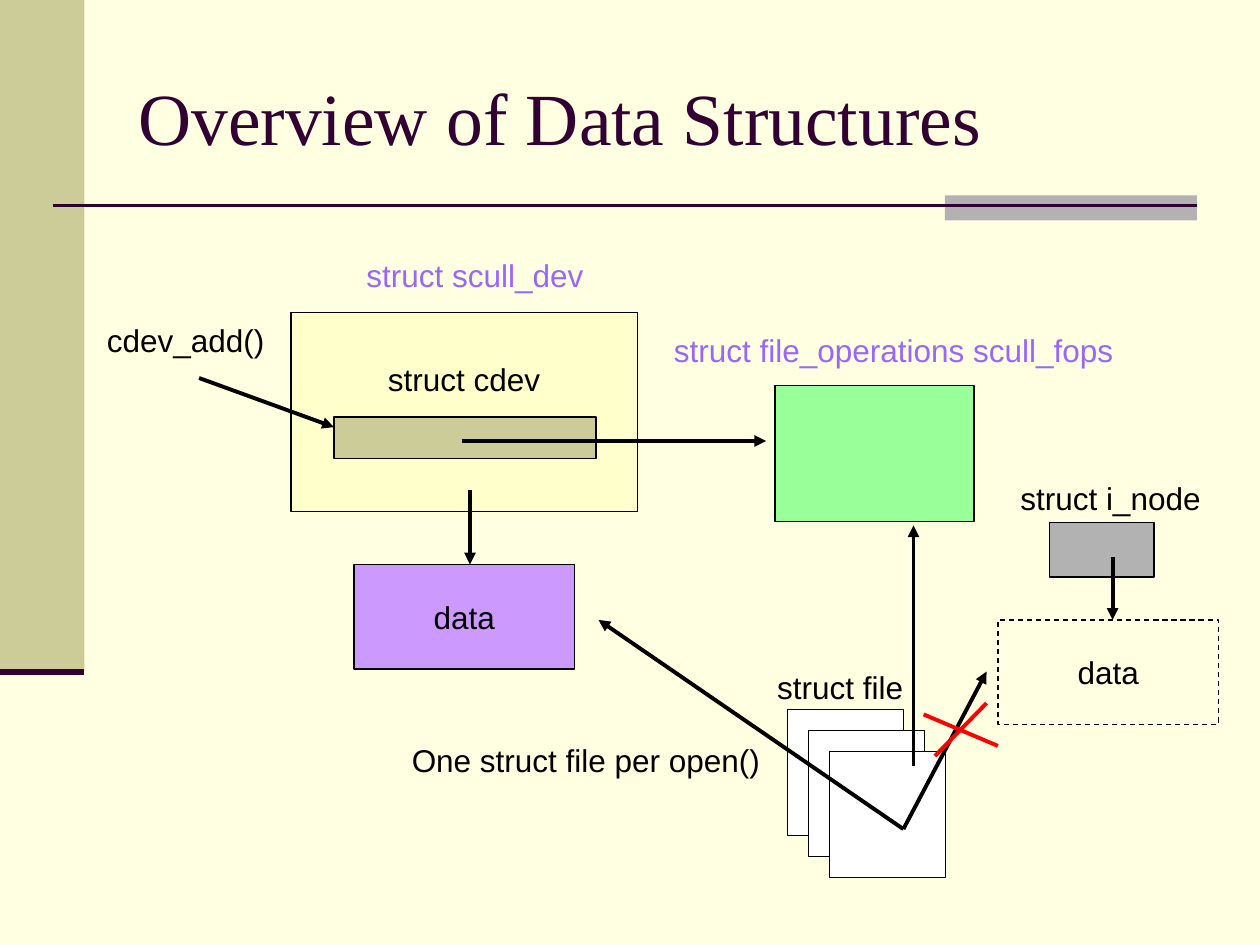
from lxml.etree import SubElement
from pptx import Presentation
from pptx.dml.color import RGBColor
from pptx.enum.dml import MSO_LINE
from pptx.enum.shapes import MSO_CONNECTOR, MSO_SHAPE
from pptx.enum.text import MSO_ANCHOR, MSO_AUTO_SIZE, PP_ALIGN
from pptx.oxml.ns import qn
from pptx.util import Inches, Pt

INK = "000000"
PLUM = "330033"
VIOLET = "9966FF"
SAND = "CCCC99"
GRAY = "B2B2B2"


def color(code):
    """Turn a hex string into a colour."""
    return RGBColor.from_string(code)


def write(shape, text, size=18, font="Arial", ink=INK):
    """Put one styled line of text in a shape."""
    frame = shape.text_frame
    frame.text = text
    run = frame.paragraphs[0].runs[0]
    run.font.size = Pt(size)
    run.font.name = font
    run.font.color.rgb = color(ink)
    return frame


def label(slide, x, y, w, text, ink=INK):
    """Add a label that fits its single line."""
    shape = slide.shapes.add_textbox(Inches(x), Inches(y), Inches(w), Inches(0.4))
    frame = write(shape, text, ink=ink)
    frame.word_wrap = False
    frame.auto_size = MSO_AUTO_SIZE.SHAPE_TO_FIT_TEXT


def block(slide, x, y, w, h, fill=None, text="", edge=True, dash=False):
    """Add a rectangle, with centred text if any."""
    shape = slide.shapes.add_shape(
        MSO_SHAPE.RECTANGLE, Inches(x), Inches(y), Inches(w), Inches(h))
    shape.shadow.inherit = False
    if fill:
        shape.fill.solid()
        shape.fill.fore_color.rgb = color(fill)
    else:
        shape.fill.background()
    if edge:
        shape.line.color.rgb = color(INK)
        shape.line.width = Pt(0.75)
    else:
        shape.line.fill.background()
    if dash:
        shape.line.dash_style = MSO_LINE.DASH
    if text:
        frame = write(shape, text)
        frame.word_wrap = False
        frame.vertical_anchor = MSO_ANCHOR.MIDDLE
        frame.paragraphs[0].alignment = PP_ALIGN.CENTER


def line(slide, x1, y1, x2, y2, ink=INK, width=2.25, head=False):
    """Draw a straight line, with an arrowhead at its end if asked."""
    link = slide.shapes.add_connector(
        MSO_CONNECTOR.STRAIGHT, Inches(x1), Inches(y1), Inches(x2), Inches(y2))
    link.line.color.rgb = color(ink)
    link.line.width = Pt(width)
    if head:
        SubElement(link.line._get_or_add_ln(), qn("a:tailEnd"), type="triangle")
    SubElement(link._element.spPr, qn("a:effectLst"))


def arrow(slide, x1, y1, x2, y2):
    """Draw a black arrow."""
    line(slide, x1, y1, x2, y2, head=True)


def frame(slide, x, y, w, h):
    """Draw the side band and the rule under the title."""
    band, foot, rule = 0.67, y + 5.33, y + 1.63
    block(slide, x, y, band, foot - y, SAND, edge=False)
    block(slide, x + w - 2.5, rule - 0.08, 2, 0.2, GRAY, edge=False)
    line(slide, x + 0.42, rule, x + w - 0.5, rule, PLUM, 1.5)
    line(slide, x, foot, x + band, foot, PLUM, 3.5)


def title(slide, x, y, w, h):
    """Write the slide title."""
    shape = slide.shapes.add_textbox(Inches(x), Inches(y), Inches(w), Inches(h))
    text = write(shape, "Overview of Data Structures", 42, "Times New Roman", PLUM)
    text.word_wrap = True
    text.vertical_anchor = MSO_ANCHOR.MIDDLE


def device(slide, x, y, w, h):
    """Draw the device struct, its cdev and its data."""
    block(slide, x, y, w, h, "FFFFCC")
    label(slide, x + 0.5, y - 0.5, 1.92, "struct scull_dev", VIOLET)
    block(slide, x + 0.34, y + 0.83, w - 0.67, 0.33, SAND)
    label(slide, x + 0.67, y + 0.33, 1.41, "struct cdev")
    label(slide, x - 1.56, y + 0.02, 1.45, "cdev_add()")
    arrow(slide, x - 0.73, y + 0.52, x + 0.34, y + 0.91)
    arrow(slide, x + 1.36, y + 1.02, x + 3.77, y + 1.02)
    block(slide, x + 0.5, y + 2, 1.75, 0.83, "CC99FF", "data")
    arrow(slide, x + 1.42, y + 1.41, x + 1.42, y + 2)


def fops(slide, x, y, w, h):
    """Draw the file operations struct."""
    block(slide, x, y, w, h, "99FF99")
    label(slide, x - 0.9, y - 0.48, 3.69, "struct file_operations scull_fops", VIOLET)


def inode(slide, x, y, w, h):
    """Draw the i_node and its dashed data."""
    block(slide, x, y, w, h, GRAY)
    label(slide, x - 0.33, y - 0.4, 1.63, "struct i_node")
    block(slide, x - 0.41, y + 0.77, 1.75, 0.83, text="data", dash=True)
    arrow(slide, x + 0.5, y + 0.27, x + 0.5, y + 0.77)


def files(slide, x, y, w, h):
    """Draw the stack of open files, its arrows and the red cross."""
    step = 1 / 6
    for i in range(3):
        block(slide, x + i * step, y + i * step, w, h, "FFFFFF")
    label(slide, x - 0.18, y - 0.38, 1.2, "struct file")
    label(slide, x - 3.08, y + 0.2, 2.97, "One struct file per open()")
    for dx, dy in ((1.58, -0.3), (-1.5, -0.71)):
        arrow(slide, x + w, y + 0.95, x + dx, y + dy)
    line(slide, x + 1.58, y - 0.05, x + 1.17, y + 0.37, "FF0000")
    line(slide, x + 1.08, y + 0.04, x + 1.67, y + 0.29, "FF0000")
    arrow(slide, x + 1, y + 0.45, x + 1, y - 1.46)


def main():
    """Build and save the slide."""
    deck = Presentation()
    deck.slide_width, deck.slide_height = Inches(10), Inches(7.5)
    slide = deck.slides.add_slide(deck.slide_layouts[6])
    back = slide.background.fill
    back.solid()
    back.fore_color.rgb = color("FFFFE1")
    frame(slide, 0, 0, 10, 7.5)
    title(slide, 1, 0.3, 8.5, 1.25)
    device(slide, 2.31, 2.48, 2.75, 1.58)
    fops(slide, 6.15, 3.06, 1.58, 1.08)
    inode(slide, 8.33, 4.15, 0.83, 0.43)
    files(slide, 6.25, 5.63, 0.92, 1)
    deck.save("out.pptx")


if __name__ == "__main__":
    main()
